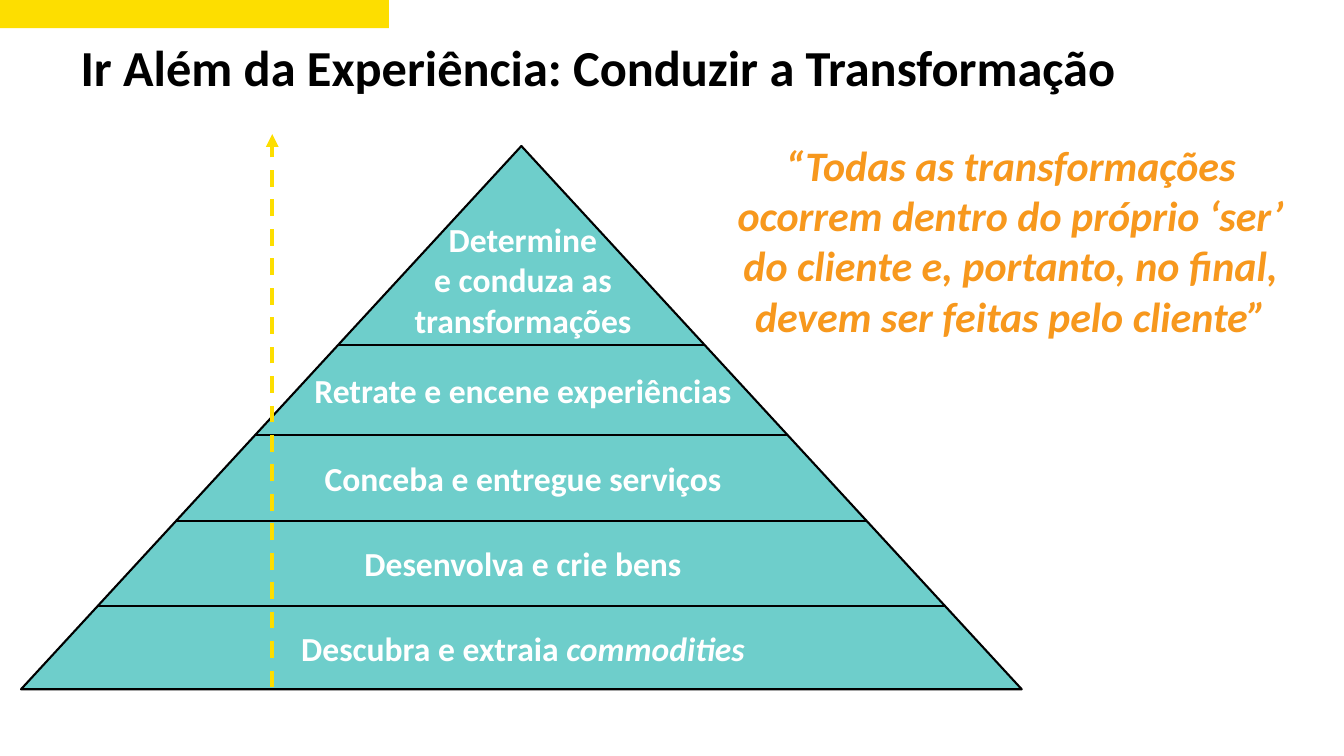
"""Build the slide with the pyramid of economic value and transformation quote."""
from lxml import etree
from pptx import Presentation
from pptx import util as u
from pptx.dml.color import RGBColor
from pptx.enum import dml, shapes, text
from pptx.oxml.ns import qn

YELLOW = RGBColor(0xFD, 0xDE, 0x00)
TEAL = RGBColor(0x6E, 0xCE, 0xCB)
ORANGE = RGBColor(0xF7, 0x98, 0x1D)
BLACK = RGBColor(0, 0, 0)
WHITE = RGBColor(0xFF, 0xFF, 0xFF)


def add_text(parent, box, paragraphs, size, color, align, anchor, italic=False):
    sp = parent.add_textbox(*map(u.Cm, box))
    tf = sp.text_frame
    tf.word_wrap = True
    tf.vertical_anchor = anchor
    for i, runs in enumerate(paragraphs):
        p = tf.paragraphs[0] if i == 0 else tf.add_paragraph()
        p.alignment = align
        for j, words in enumerate(runs):
            r = p.add_run()
            r.text = words
            fmt = {"name": "Calibri", "size": u.Pt(size), "bold": True,
                   "italic": italic or j > 0}
            for key, value in fmt.items():
                setattr(r.font, key, value)
            r.font.color.rgb = color
    return tf


def add_line(parent, x1, y1, x2, y2, color, width):
    c = parent.add_connector(shapes.MSO_CONNECTOR.STRAIGHT, *map(u.Cm, (x1, y1, x2, y2)))
    c.line.color.rgb = color
    c.line.width = u.Pt(width)
    etree.SubElement(c._element.spPr, qn("a:effectLst"))
    return c


prs = Presentation()
prs.slide_width, prs.slide_height = u.Cm(33.87), u.Cm(19.05)
s = prs.slides.add_slide(prs.slide_layouts[6])
CENTER, LEFT = text.PP_ALIGN.CENTER, text.PP_ALIGN.LEFT
TOP, MIDDLE = text.MSO_ANCHOR.TOP, text.MSO_ANCHOR.MIDDLE

bar = s.shapes.add_shape(shapes.MSO_SHAPE.RECTANGLE, 0, 0, u.Cm(9.8), u.Cm(0.71))
bar.shadow.inherit = False
bar.fill.solid()
bar.fill.fore_color.rgb = YELLOW
bar.line.fill.background()

title = add_text(s.shapes, (1.78, 0.97, 31.12, 1.93),
                 [["Ir Além da Experiência: Conduzir a Transformação"]], 36, BLACK, LEFT, TOP)
title.paragraphs[0].line_spacing = 0.9

left, top, width, height = 0.53, 3.68, 25.22, 13.69
middle, bottom = left + width / 2, top + height
pyramid = s.shapes.add_group_shape().shapes
tri = pyramid.add_shape(shapes.MSO_SHAPE.ISOSCELES_TRIANGLE,
                        *map(u.Cm, (left, top, width, height)))
tri.shadow.inherit = False
tri.fill.solid()
tri.fill.fore_color.rgb = TEAL
tri.line.color.rgb = BLACK
tri.line.width = u.Pt(1.5)

add_text(pyramid, (8.76, 6.1, 8.84, 1.88),
         [["Determine"], ["e conduza as"], ["transformações"]], 24, WHITE, CENTER, MIDDLE)

edges = [8.69, 10.97, 13.13, 15.27, bottom]
bands = [["Retrate e encene experiências"],
         ["Conceba e entregue serviços"],
         ["Desenvolva e crie bens"],
         ["Descubra e extraia ", "commodities"]]
for runs, upper, lower in zip(bands, edges, edges[1:]):
    half = (upper - top) / height * width / 2
    add_line(pyramid, middle - half, upper, middle + half, upper, BLACK, 1.5)
    add_text(pyramid, (6.07, (upper + lower) / 2 - 0.94, 14.22, 1.88),
             [runs], 24, WHITE, CENTER, MIDDLE)

quote = add_text(s.shapes, (18.06, 3.38, 14.83, 5.38),
                 [["“Todas as transformações ocorrem dentro do próprio ‘ser’ do cliente e, "
                   "portanto, no final, devem ser feitas pelo cliente”"]],
                 30, ORANGE, CENTER, TOP, italic=True)
quote.auto_size = text.MSO_AUTO_SIZE.SHAPE_TO_FIT_TEXT

arrow = add_line(s.shapes, 6.86, 17.32, 6.86, 3.38, YELLOW, 3)
arrow.line.dash_style = dml.MSO_LINE.DASH
etree.SubElement(arrow.line._get_or_add_ln(), qn("a:tailEnd"), type="triangle")

prs.save("out.pptx")
